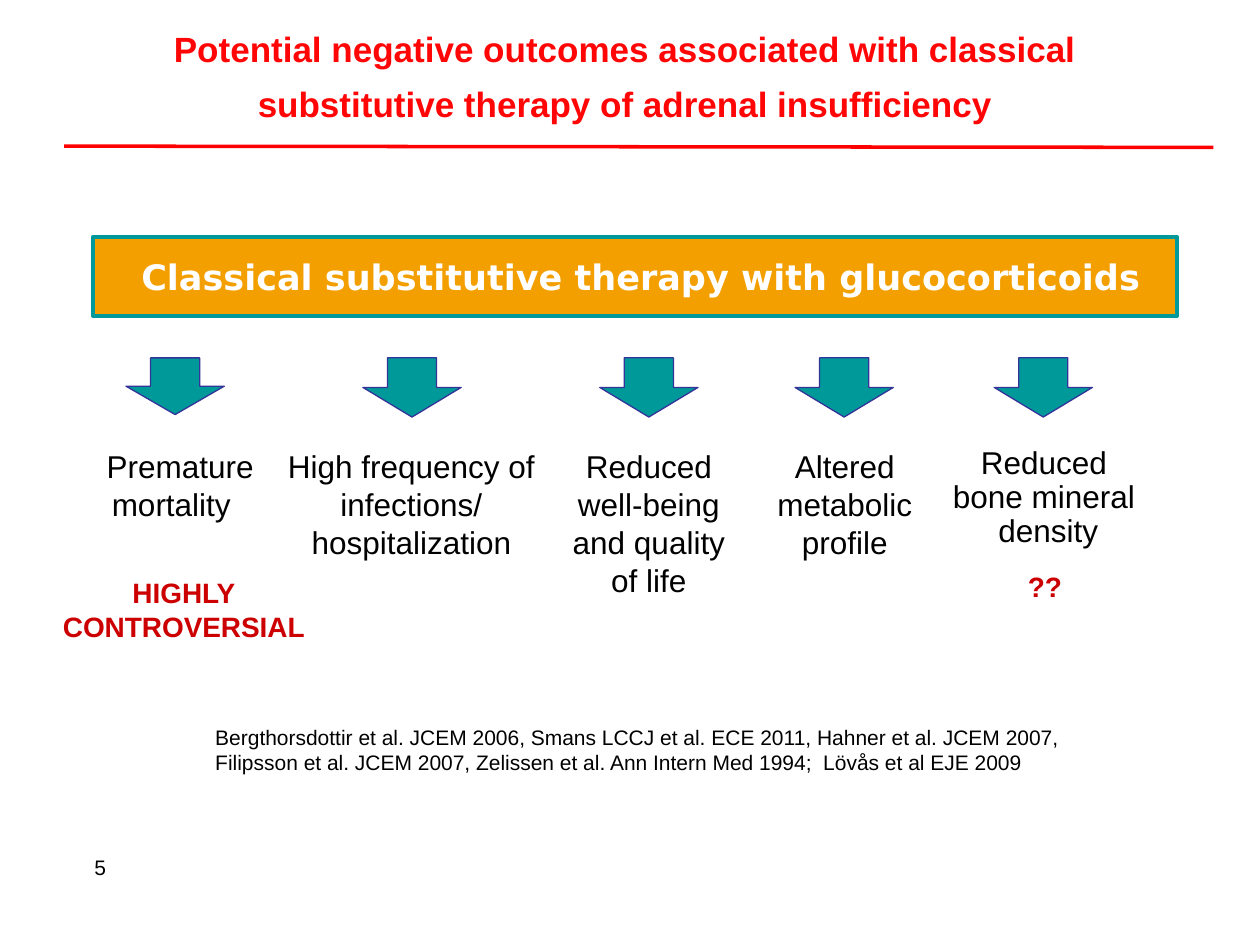
"""Build a slide on the negative outcomes of classical glucocorticoid therapy."""
from dataclasses import dataclass

from lxml import etree
from pptx import Presentation
from pptx import util as u
from pptx.dml.color import RGBColor
from pptx.enum import shapes, text
from pptx.oxml import ns


@dataclass(frozen=True)
class Theme:
    font: str = "Arial"
    banner_font: str = "DejaVu Sans"
    title: str = "FF0505"
    rule: str = "FF0000"
    warning: str = "CC0000"
    body: str = "000000"
    white: str = "FFFFFF"
    orange: str = "F49F00"
    teal: str = "009999"
    indigo: str = "333399"
    heading_size: int = 20
    label_size: int = 18
    warning_size: int = 16
    small_size: int = 12


theme = Theme()
CENTER, LEFT = text.PP_ALIGN.CENTER, text.PP_ALIGN.LEFT


def write(shape, lines, size, color=theme.body, bold=False, align=CENTER,
          wrap=True, font=theme.font, spacing=None):
    frame = shape.text_frame
    frame.word_wrap = wrap
    for index, line in enumerate(lines):
        paragraph = frame.add_paragraph() if index else frame.paragraphs[0]
        paragraph.alignment = align
        paragraph.line_spacing = spacing
        for part_index, part in enumerate(line.split("\n")):
            if part_index:
                paragraph.add_line_break()
            run = paragraph.add_run()
            run.text = part
            run.font.name = font
            run.font.size = u.Pt(size)
            run.font.bold = bold
            run.font.color.rgb = RGBColor.from_string(color)
    return frame


def add_block(kind, box, fill, line, width):
    shape = slide.shapes.add_shape(kind, *map(u.Inches, box))
    shape.shadow.inherit = False
    shape.fill.solid()
    shape.fill.fore_color.rgb = RGBColor.from_string(fill)
    shape.line.color.rgb = RGBColor.from_string(line)
    shape.line.width = u.Pt(width)
    return shape


presentation = Presentation()
presentation.slide_width = u.Inches(10)
presentation.slide_height = u.Inches(7.5)
slide = presentation.slides.add_slide(presentation.slide_layouts[6])

title = slide.shapes.add_textbox(*map(u.Inches, (0.5, 0.22, 9, 1.25)))
title_frame = write(title, ["Potential negative outcomes associated with classical ",
                            "substitutive therapy of adrenal insufficiency "],
                    theme.heading_size, theme.title, bold=True, wrap=False)
title_frame.margin_top = 0
title_frame.paragraphs[0].space_after = u.Pt(7.5)

rule = slide.shapes.add_connector(shapes.MSO_CONNECTOR.STRAIGHT,
                                  *map(u.Inches, (0.51, 1.16, 9.63, 1.17)))
rule.line.color.rgb = RGBColor.from_string(theme.rule)
rule.line.width = u.Pt(2)
etree.SubElement(rule._element.spPr, ns.qn("a:effectLst"))

banner = add_block(shapes.MSO_SHAPE.RECTANGLE, (0.74, 1.88, 8.6, 0.63),
                   theme.orange, theme.teal, 2.25)
write(banner, [" Classical substitutive therapy with glucocorticoids"],
      theme.heading_size, theme.white, bold=True, wrap=False, font=theme.banner_font)
banner.text_frame.vertical_anchor = text.MSO_ANCHOR.MIDDLE

outcomes = [
    (1, 0.45, 0.53, 1.73, 0.7, None, [" Premature", "mortality "]),
    (2.88, 0.47, 2.16, 2.21, 1.55, None,
     ["High frequency of infections/", "hospitalization"]),
    (4.76, 0.47, 4.33, 1.64, 1.31, None,
     ["Reduced", "well-being and quality of life"]),
    (6.31, 0.47, 5.73, 1.95, 1.21, None, ["Altered", "metabolic", "profile"]),
    (7.89, 0.47, 6.84, 2.89, 0.92, 0.9, ["Reduced\nbone mineral", " density"]),
]
for arrow_left, arrow_height, left, width, height, spacing, lines in outcomes:
    add_block(shapes.MSO_SHAPE.DOWN_ARROW, (arrow_left, 2.84, 0.78, arrow_height),
              theme.teal, theme.indigo, 0.75)
    label = slide.shapes.add_textbox(*map(u.Inches, (left, 3.5, width, height)))
    write(label, lines, theme.label_size, spacing=spacing)

warnings = [
    ((0.39, 4.52, 2.14, 0.64), ["HIGHLY", "CONTROVERSIAL"], CENTER),
    ((8.06, 4.47, 0.47, 0.37), ["??"], LEFT),
]
for box, lines, align in warnings:
    warning = slide.shapes.add_textbox(*map(u.Inches, box))
    write(warning, lines, theme.warning_size, theme.warning, bold=True,
          align=align, wrap=False)

references = slide.shapes.add_textbox(*map(u.Inches, (0.61, 5.7, 7.95, 0.7)))
references_frame = write(
    references,
    ["Bergthorsdottir et al. JCEM 2006, Smans LCCJ et al. ECE 2011, Hahner et al. JCEM 2007, \n"
     "Filipsson et al. JCEM 2007, Zelissen et al. Ann Intern Med 1994;  Lövås et al EJE 2009"],
    theme.small_size, align=LEFT, wrap=False)
references_frame.paragraphs[0]._p.get_or_add_pPr().set("marL", str(u.Inches(1)))

page_number = slide.shapes.add_textbox(*map(u.Inches, (0.65, 6.73, 0.96, 0.25)))
write(page_number, ["5"], theme.small_size, align=LEFT)

presentation.save("out.pptx")
